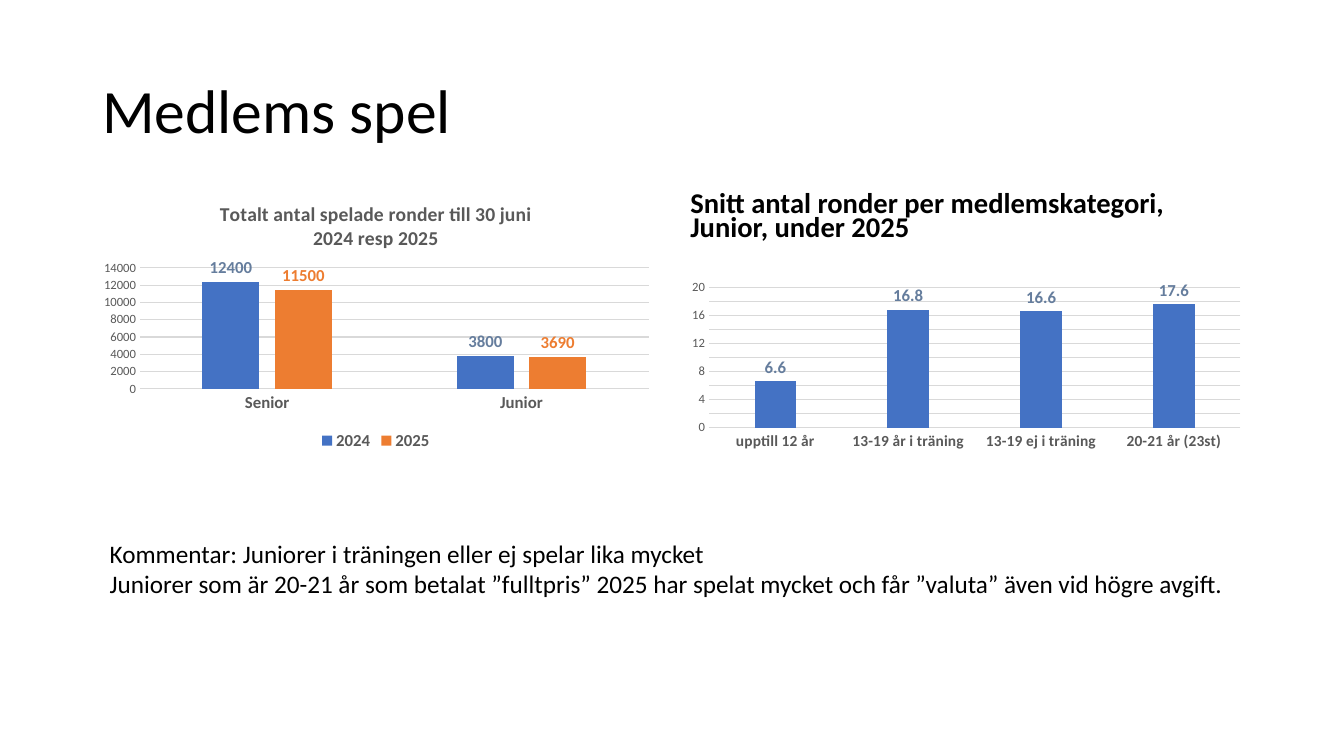
from dataclasses import dataclass

from lxml import etree
from pptx import Presentation
from pptx.chart.data import CategoryChartData
from pptx.dml.color import RGBColor
from pptx.enum.chart import XL_CHART_TYPE, XL_LABEL_POSITION, XL_LEGEND_POSITION, XL_TICK_MARK
from pptx.enum.text import MSO_ANCHOR
from pptx.oxml.ns import qn
from pptx.util import Pt

COLUMNS = XL_CHART_TYPE.COLUMN_CLUSTERED
OUTSIDE_END = XL_LABEL_POSITION.OUTSIDE_END
BOTTOM_LEGEND = XL_LEGEND_POSITION.BOTTOM
NO_TICK = XL_TICK_MARK.NONE
TOP, MIDDLE, BOTTOM = MSO_ANCHOR.TOP, MSO_ANCHOR.MIDDLE, MSO_ANCHOR.BOTTOM


@dataclass(frozen=True)
class Theme:
    font: str = "Calibri"
    black: str = "000000"
    grey: str = "595959"
    grid: str = "D9D9D9"
    blue: str = "4472C4"
    orange: str = "ED7D31"
    blue_label: str = "657D9D"
    title: float = 44
    heading: float = 20.4
    body: float = 18
    chart_title: float = 14
    label: float = 12
    small_label: float = 11
    chart: float = 10
    scale: float = 9
    hairline: float = 0.75


class SlideBuilder:
    def __init__(self, slide, theme):
        self.s = slide
        self.theme = theme

    def style(self, font, size, color, bold=False):
        font.name = self.theme.font
        font.size = Pt(size)
        font.bold = bold
        font.color.rgb = RGBColor.from_string(color)

    def text(self, box, text, size, bold=False, anchor=TOP, spacing=None, before=0):
        sp = self.s.shapes.add_textbox(*map(Pt, box))
        tf = sp.text_frame
        tf.word_wrap = True
        tf.vertical_anchor = anchor
        tf.text = text
        for p in tf.paragraphs:
            p.line_spacing = spacing
            p.space_before = Pt(before)
            for r in p.runs:
                self.style(r.font, size, self.theme.black, bold)

    def line(self, line_format):
        line_format.color.rgb = RGBColor.from_string(self.theme.grid)
        line_format.width = Pt(self.theme.hairline)

    def plot_layout(self, chart, fractions):
        """Place the inner plot area by fractions of the chart frame."""
        area = chart.element.find(".//" + qn("c:plotArea")) if hasattr(chart, "element") \
            else chart._chartSpace.find(".//" + qn("c:plotArea"))
        for old in area.findall(qn("c:layout")):
            area.remove(old)
        layout = etree.Element(qn("c:layout"))
        manual = etree.SubElement(layout, qn("c:manualLayout"))
        settings = [("layoutTarget", "inner"), ("xMode", "edge"), ("yMode", "edge")]
        for tag, value in settings + list(zip("xywh", fractions)):
            etree.SubElement(manual, qn("c:" + tag)).set("val", str(value))
        area.insert(0, layout)

    def column_chart(self, box, categories, series, top, step, category_size, plot, title=None):
        """Draw columns; series holds (name, values, fill colour, label colour)."""
        th = self.theme
        data = CategoryChartData()
        data.categories = categories
        for name, values, _, _ in series:
            data.add_series(name, values)
        chart = self.s.shapes.add_chart(COLUMNS, *map(Pt, box), data).chart
        self.style(chart.font, th.chart, th.black)
        self.plot_layout(chart, plot)

        # Title and legend
        chart.has_title = title is not None
        if title:
            tf = chart.chart_title.text_frame
            tf.text = title
            for p in tf.paragraphs:
                for r in p.runs:
                    self.style(r.font, th.chart_title, th.grey, True)
        chart.has_legend = len(series) > 1
        if chart.has_legend:
            chart.legend.position = BOTTOM_LEGEND
            chart.legend.include_in_layout = False
            self.style(chart.legend.font, th.label, th.grey, True)

        # Axes
        category, value = chart.category_axis, chart.value_axis
        for axis in (category, value):
            axis.major_tick_mark = axis.minor_tick_mark = NO_TICK
        self.style(category.tick_labels.font, category_size, th.grey, True)
        self.style(value.tick_labels.font, th.scale, th.grey)
        self.line(category.format.line)
        value.format.line.fill.background()
        value.has_major_gridlines = True
        self.line(value.major_gridlines.format.line)
        value.minimum_scale, value.maximum_scale, value.major_unit = 0, top, step

        # Columns and their values
        bars = chart.plots[0]
        bars.vary_by_categories = False
        bars.gap_width, bars.overlap = 219, -27
        for ser, (_, _, fill, label_color) in zip(bars.series, series):
            ser.format.fill.solid()
            ser.format.fill.fore_color.rgb = RGBColor.from_string(fill)
            labels = ser.data_labels
            labels.show_value = True
            labels.position = OUTSIDE_END
            self.style(labels.font, th.label, label_color, True)


def main():
    prs = Presentation()
    prs.slide_width, prs.slide_height = Pt(960), Pt(540)
    th = Theme()
    b = SlideBuilder(prs.slides.add_slide(prs.slide_layouts[6]), th)

    # Slide title
    b.text((66, 28.75, 828, 104.4), "Medlems spel", th.title, anchor=MIDDLE, spacing=0.9)

    # Rounds played, both years
    b.column_chart(
        (65.5, 133.2, 406, 191.5), ["Senior", "Junior"],
        [("2024", (12400, 3800), th.blue, th.blue_label),
         ("2025", (11500, 3690), th.orange, th.orange)],
        14000, 2000, th.label, (0.085, 0.304, 0.895, 0.451),
        title="Totalt antal spelade ronder till 30 juni\n2024 resp 2025")

    # Average rounds per junior category
    b.text((486, 132.5, 408.2, 44), "Snitt antal ronder per medlemskategori, \vJunior, under 2025",
           th.heading, bold=True, anchor=BOTTOM, spacing=0.7, before=10)
    b.column_chart(
        (486, 197.3, 408.2, 127.4),
        ["upptill 12 år", "13-19 år i träning", "13-19 ej i träning", "20-21 år (23st)"],
        [("Series 1", (6.6, 16.8, 16.6, 17.6), th.blue, th.blue_label)],
        20, 2, th.small_label, (0.05, 0.063, 0.93, 0.787))

    # Comment
    b.text((71.3, 380.9, 828, 50.9),
           "Kommentar: Juniorer i träningen eller ej spelar lika mycket\n"
           "Juniorer som är 20-21 år som betalat ”fulltpris” 2025 har spelat mycket "
           "och får ”valuta” även vid högre avgift.", th.body)

    prs.save("out.pptx")


if __name__ == "__main__":
    main()
